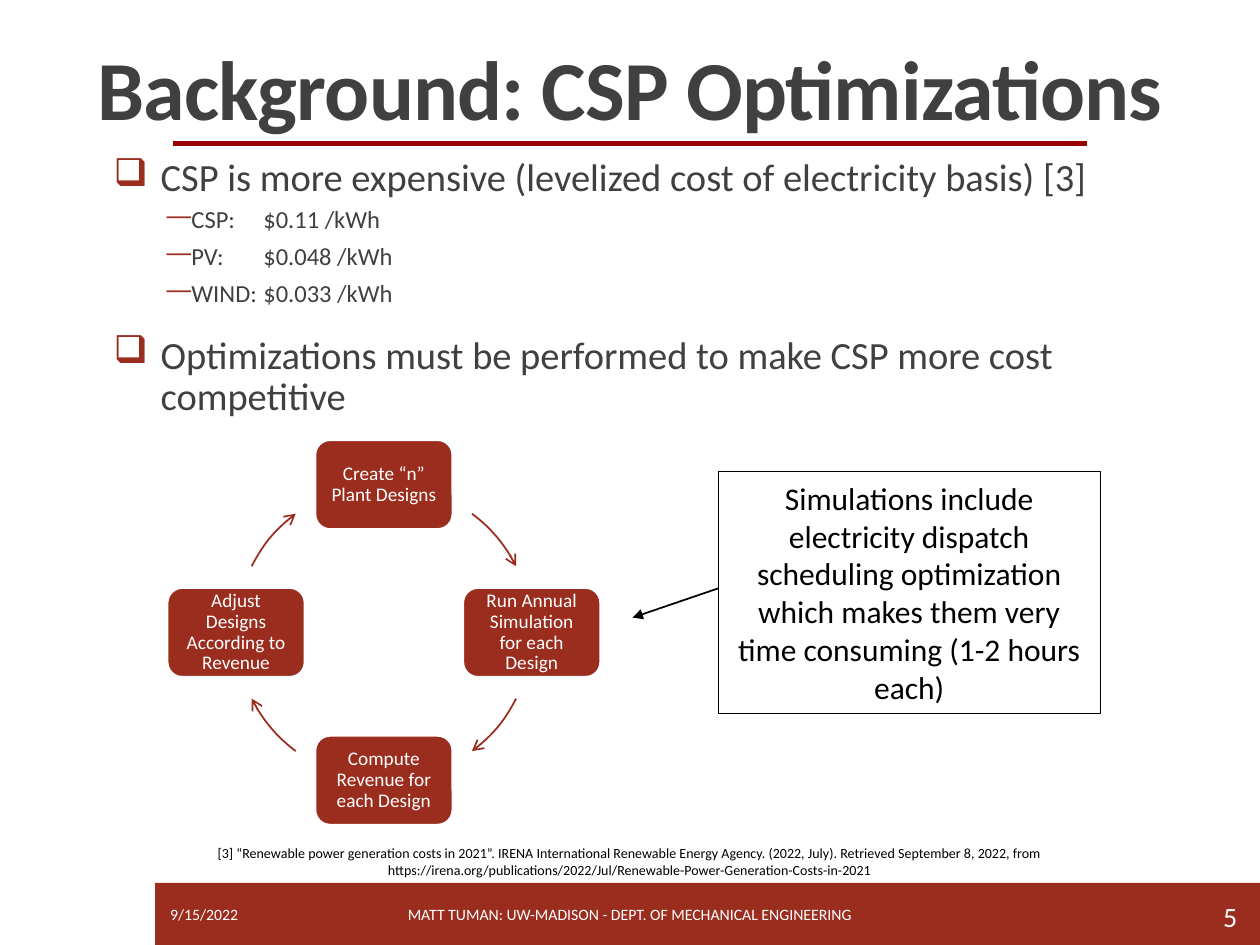
import dataclasses
import lxml.etree
import pptx
import pptx.dml.color
import pptx.enum.shapes
import pptx.enum.text
import pptx.oxml.ns
import pptx.slide
import pptx.util

Cm = pptx.util.Cm
Pt = pptx.util.Pt
Kind = pptx.enum.shapes.MSO_SHAPE
Align = pptx.enum.text.PP_ALIGN
Anchor = pptx.enum.text.MSO_ANCHOR

HUES = {"rust": "9B2D1F", "red": "990000", "ink": "404040", "black": "000000", "white": "FFFFFF"}
STEPS = [
    ("Create “n” Plant Designs", 0, -1),
    ("Run Annual Simulation for each Design", 1, 0),
    ("Compute Revenue for each Design", 0, 1),
    ("Adjust Designs According to Revenue", -1, 0),
]
HEAD = {"size": 22, "indent": 0.95, "left": 0.95, "mark": "❑",
        "par": {"line_spacing": 0.9, "space_before": Pt(12), "space_after": Pt(2)}}
ITEM = {"size": 14, "indent": 0.5, "left": 1.57, "mark": "―", "tab": 3.02,
        "par": {"line_spacing": 0.9, "space_before": Pt(2), "space_after": Pt(4)}}
POINTS = [
    ("CSP is more expensive (levelized cost of electricity basis) [3]",
     HEAD | {"par": HEAD["par"] | {"space_before": Pt(0)}}),
    ("CSP:\t$0.11 /kWh", ITEM),
    ("PV:\t$0.048 /kWh", ITEM),
    ("WIND:\t$0.033 /kWh", ITEM),
    ("Optimizations must be performed to make CSP more cost competitive", HEAD),
]


def node(root, tag, **vals):
    """Append a drawing element with the given attributes."""
    return lxml.etree.SubElement(root, pptx.oxml.ns.qn("a:" + tag), vals)


@dataclasses.dataclass
class Deck:
    """Hold the style and the current slide."""

    page: pptx.slide.Slide
    hues: dict
    font: str = "Calibri"

    def tint(self, name):
        """Return a named colour."""
        return pptx.dml.color.RGBColor.from_string(self.hues[name])

    def words(self, par, text, size, hue, bold=False, **form):
        """Fill a paragraph with one styled run."""
        for key, val in form.items():
            setattr(par, key, val)
        run = par.add_run()
        run.text = text
        looks = {"name": self.font, "size": Pt(size), "bold": bold}
        for key, val in looks.items():
            setattr(run.font, key, val)
        run.font.color.rgb = self.tint(hue)
        return run

    def frame(self, shape, side=0.25, edge=0.13, anchor=Anchor.MIDDLE):
        """Set wrapping, insets and anchor of a text frame."""
        frame = shape.text_frame
        form = {"word_wrap": True, "vertical_anchor": anchor,
                "margin_left": Cm(side), "margin_right": Cm(side),
                "margin_top": Cm(edge), "margin_bottom": Cm(edge)}
        for key, val in form.items():
            setattr(frame, key, val)
        return frame

    def title(self, text, box):
        """Place and style the title placeholder."""
        shape = self.page.shapes.title
        for key, val in zip(("left", "top", "width", "height"), box):
            setattr(shape, key, Cm(val))
        frame = self.frame(shape, anchor=Anchor.BOTTOM)
        run = self.words(frame.paragraphs[0], text, 48, "ink", True,
                         alignment=Align.CENTER, line_spacing=0.85)
        run.font._element.set("spc", "-50")

    def label(self, text, box, size, hue, align=Align.LEFT, anchor=Anchor.MIDDLE):
        """Add a one-paragraph text box."""
        shape = self.page.shapes.add_textbox(*map(Cm, box))
        frame = self.frame(shape, anchor=anchor)
        self.words(frame.paragraphs[0], text, size, hue, alignment=align)

    def points(self, rows, box):
        """Add the bulleted text."""
        shape = self.page.shapes.add_textbox(*map(Cm, box))
        frame = self.frame(shape, side=0, anchor=Anchor.TOP)
        for num, (text, form) in enumerate(rows):
            par = frame.add_paragraph() if num else frame.paragraphs[0]
            self.words(par, text, form["size"], "ink", **form["par"])
            props = par._p.get_or_add_pPr()
            props.set("marL", str(Cm(form["left"])))
            props.set("indent", str(-Cm(form["indent"])))
            node(node(props, "buClr"), "srgbClr", val=self.hues["rust"])
            node(props, "buChar", char=form["mark"])
            if "tab" in form:
                node(node(props, "tabLst"), "tab", pos=str(Cm(form["tab"])), algn="l")

    def shape(self, kind, box, fill=None, line=None, wide=1.25):
        """Add a preset shape without shadow."""
        shape = self.page.shapes.add_shape(kind, *map(Cm, box))
        shape.shadow.inherit = False
        if fill:
            shape.fill.solid()
            shape.fill.fore_color.rgb = self.tint(fill)
        else:
            shape.fill.background()
        if line:
            shape.line.color.rgb = self.tint(line)
            shape.line.width = Pt(wide)
        else:
            shape.line.fill.background()
        return shape

    def panel(self, kind, text, box, size, hue, inset=0.25, space=1.0, **look):
        """Add a shape with centred text."""
        frame = self.frame(self.shape(kind, box, **look), side=inset)
        self.words(frame.paragraphs[0], text, size, hue,
                   alignment=Align.CENTER, line_spacing=space)

    def arc(self, box, start, end):
        """Add a clockwise arc with an open arrowhead."""
        shape = self.shape(Kind.ARC, box, line="rust", wide=1)
        for num, angle in enumerate((start, end)):
            shape.adjustments[num] = angle % 360 * 0.6
        node(shape.line._get_or_add_ln(), "tailEnd", type="arrow")

    def line(self, ends, hue, wide, tip=None):
        """Add a straight line."""
        kind = pptx.enum.shapes.MSO_CONNECTOR.STRAIGHT
        line = self.page.shapes.add_connector(kind, *map(Cm, ends))
        line.line.color.rgb = self.tint(hue)
        line.line.width = Pt(wide)
        if tip:
            node(line.line._get_or_add_ln(), "tailEnd", type=tip)
        node(line._element.spPr, "effectLst")

    def cycle(self, steps, mid, reach, size):
        """Add the ring of steps and the arcs between them."""
        (cx, cy), (wide, high) = mid, size
        ring = (cx - reach, cy - reach, 2 * reach, 2 * reach)
        for num, (text, dx, dy) in enumerate(steps):
            box = (cx + dx * reach - wide / 2, cy + dy * reach - high / 2, wide, high)
            self.panel(Kind.ROUNDED_RECTANGLE, text, box, 11, "white", 0.2, 0.9,
                       fill="rust", line="white")
            turn = 40 if num % 2 else -40
            turn += 180 if num > 1 else 0
            self.arc(ring, turn - 13.4, turn + 13.4)


def main():
    """Build and save the slide."""
    show = pptx.Presentation()
    show.slide_width, show.slide_height = Cm(25.4), Cm(19.05)
    deck = Deck(show.slides.add_slide(show.slide_layouts[5]), HUES)
    deck.shape(Kind.RECTANGLE, (0, 17.8, 25.4, 1.25), fill="rust")
    deck.shape(Kind.RECTANGLE, (0, 17.73, 3.1, 1.32), fill="white", line="white")
    deck.line((3.48, 2.9, 21.92, 2.9), "red", 3)
    deck.title("Background: CSP Optimizations", (0, 0.79, 25.4, 2.11))
    deck.label("9/15/2022", (3.18, 17.93, 3.25, 1.02), 9, "white")
    deck.label("MATT TUMAN: UW-MADISON - DEPT. OF MECHANICAL ENGINEERING",
               (6.76, 17.93, 11.86, 1.02), 9, "white", Align.CENTER)
    deck.label("5", (22.45, 17.96, 2.74, 1.02), 16, "white", Align.RIGHT)
    deck.points(POINTS, (2.29, 3.07, 20.96, 5.64))
    deck.cycle(STEPS, (7.74, 12.75), 2.98, (2.77, 1.8))
    deck.line((14.48, 11.86, 12.75, 12.45), "black", 1, "triangle")
    deck.panel(Kind.RECTANGLE,
               "Simulations include electricity dispatch scheduling optimization "
               "which makes them very time consuming (1-2 hours each)",
               (14.48, 9.5, 7.7, 4.88), 18, "black", line="black", wide=0.75)
    deck.label("[3] “Renewable power generation costs in 2021”. IRENA International "
               "Renewable Energy Agency. (2022, July). Retrieved September 8, 2022, from "
               "https://irena.org/publications/2022/Jul/Renewable-Power-Generation-Costs-in-2021",
               (3.48, 16.89, 18.44, 1.37), 8, "black", Align.CENTER, Anchor.TOP)
    show.save("out.pptx")


if __name__ == "__main__":
    main()
